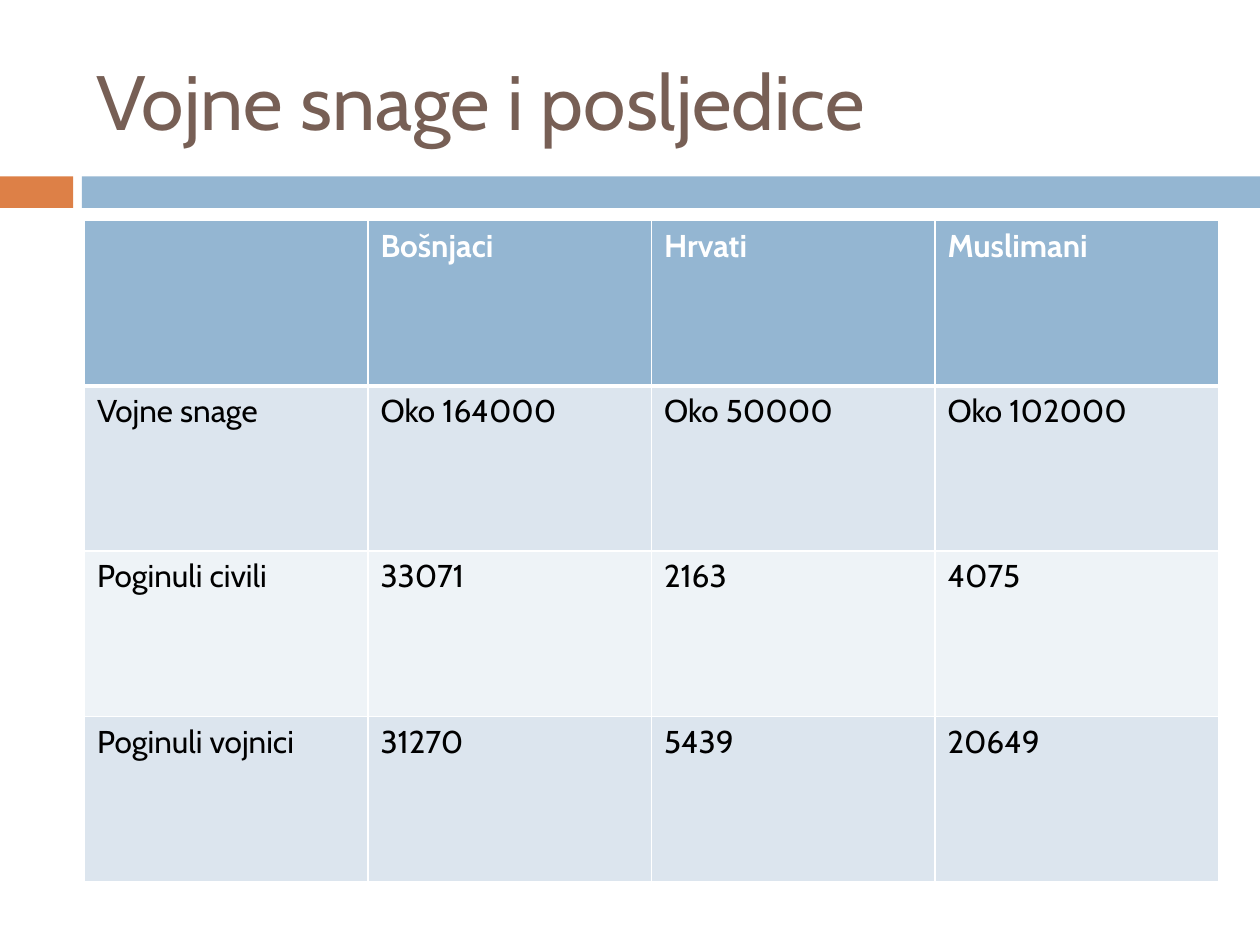
import dataclasses

import lxml.etree
import pptx
import pptx.dml.color
import pptx.enum.shapes
import pptx.enum.text
import pptx.oxml.ns
import pptx.util

Inches = pptx.util.Inches
Pt = pptx.util.Pt


@dataclasses.dataclass(frozen=True)
class Theme:
    font: str = "Cabin"
    title_size: int = 44
    cell_size: int = 18
    title: str = "775F55"
    accent: str = "DD8047"
    blue: str = "94B6D2"
    bands: tuple = ("DCE5EE", "EEF3F7")
    white: str = "FFFFFF"
    black: str = "000000"
    thin: int = 1
    thick: int = 3


THEME = Theme()

ROWS = [
    ["", "Bošnjaci", "Hrvati", "Muslimani"],
    ["Vojne snage", "Oko 164000", "Oko 50000", "Oko 102000"],
    ["Poginuli civili", "33071", "2163", "4075"],
    ["Poginuli vojnici", "31270", "5439", "20649"],
]


def rgb(color):
    return pptx.dml.color.RGBColor.from_string(color)


def style(frame, size, color, bold=False):
    for para in frame.paragraphs:
        for font in [para.font] + [run.font for run in para.runs]:
            font.name = THEME.font
            font.size = Pt(size)
            font.bold = bold
            font.color.rgb = rgb(color)


def add_bar(slide, left, width, color):
    bar = slide.shapes.add_shape(
        pptx.enum.shapes.MSO_SHAPE.RECTANGLE,
        Inches(left), Inches(1.4), Inches(width), Inches(0.25))
    bar.shadow.inherit = False
    bar.fill.solid()
    bar.fill.fore_color.rgb = rgb(color)
    bar.line.fill.background()


def add_title(slide, text):
    box = slide.shapes.add_textbox(
        Inches(0.67), Inches(0.25), Inches(8.92), Inches(1.08))
    frame = box.text_frame
    frame.word_wrap = True
    frame.vertical_anchor = pptx.enum.text.MSO_ANCHOR.MIDDLE
    frame.text = text
    style(frame, THEME.title_size, THEME.title)


def set_edges(cell, top, bottom):
    """Draw white cell borders; they must be set before the cell's fill."""
    qn = pptx.oxml.ns.qn
    props = cell._tc.get_or_add_tcPr()
    widths = {"L": THEME.thin, "R": THEME.thin, "T": top, "B": bottom}
    for side, width in widths.items():
        line = lxml.etree.SubElement(props, qn(f"a:ln{side}"), w=str(Pt(width)))
        fill = lxml.etree.SubElement(line, qn("a:solidFill"))
        lxml.etree.SubElement(fill, qn("a:srgbClr"), val=THEME.white)


def fill_cell(cell, text, row):
    head = row == 0
    top = THEME.thick if row == 1 else THEME.thin
    set_edges(cell, top, THEME.thick if head else THEME.thin)
    cell.fill.solid()
    cell.fill.fore_color.rgb = rgb(
        THEME.blue if head else THEME.bands[(row - 1) % 2])
    cell.text_frame.text = text
    style(cell.text_frame, THEME.cell_size,
          THEME.white if head else THEME.black, head)


def add_grid(slide, rows):
    table = slide.shapes.add_table(
        len(rows), len(rows[0]),
        Inches(0.67), Inches(1.75), Inches(9), Inches(5.25)).table
    for r, row in enumerate(rows):
        for c, text in enumerate(row):
            fill_cell(table.cell(r, c), text, r)


def main():
    deck = pptx.Presentation()
    deck.slide_width = Inches(10)
    deck.slide_height = Inches(7.5)
    slide = deck.slides.add_slide(deck.slide_layouts[6])
    add_bar(slide, 0, 0.58, THEME.accent)
    add_bar(slide, 0.65, 9.35, THEME.blue)
    add_title(slide, "Vojne snage i posljedice")
    add_grid(slide, ROWS)
    deck.save("out.pptx")


if __name__ == "__main__":
    main()
